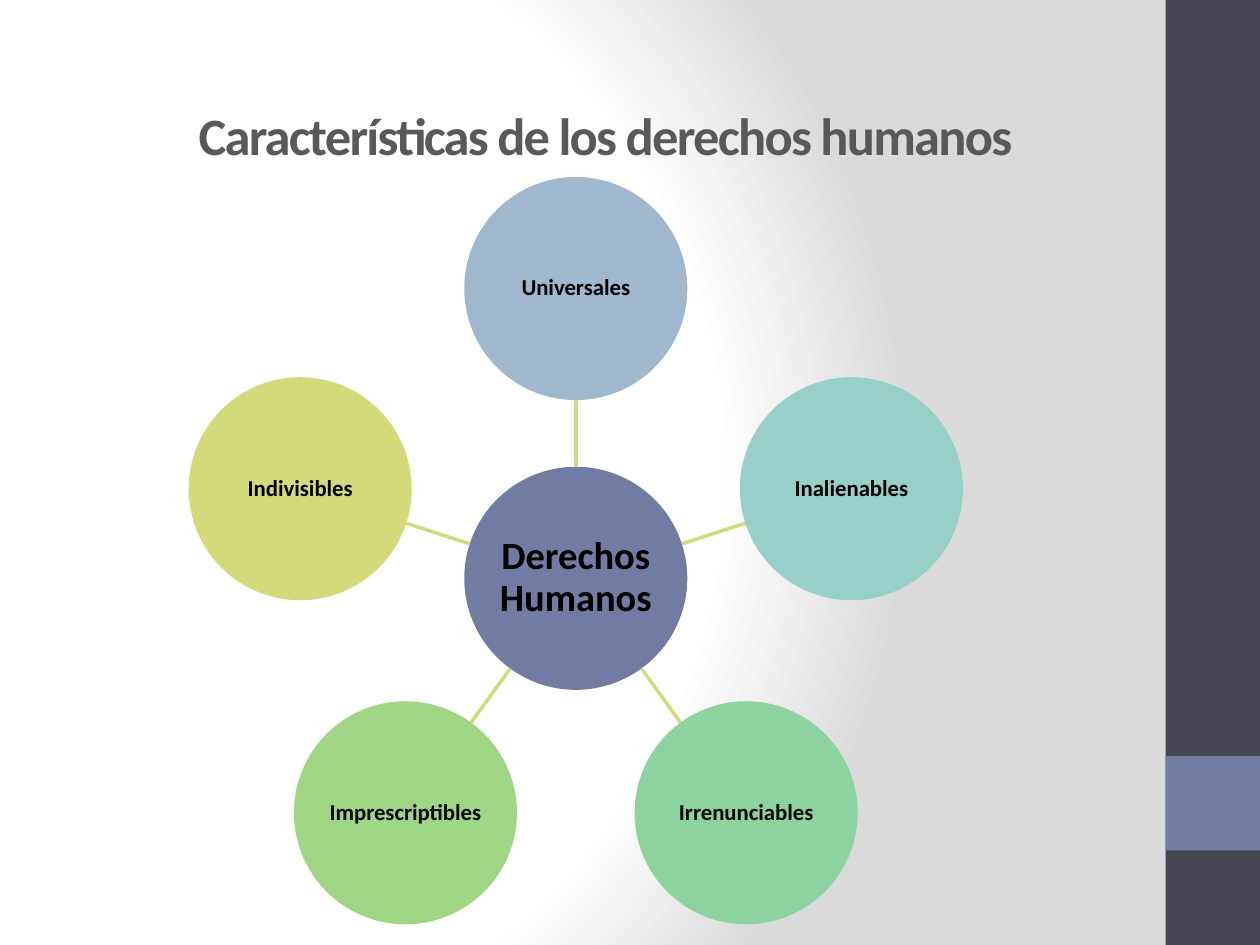
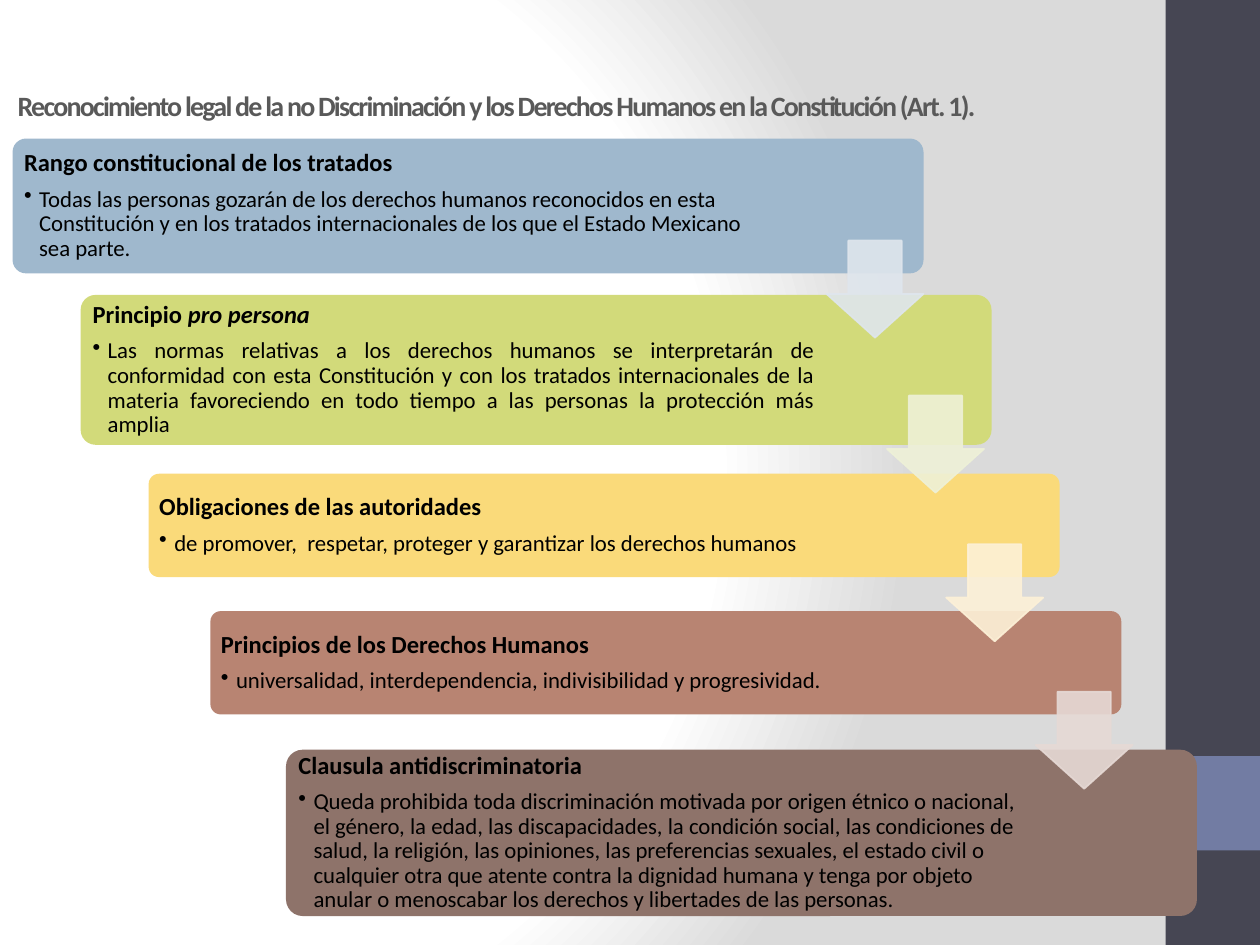
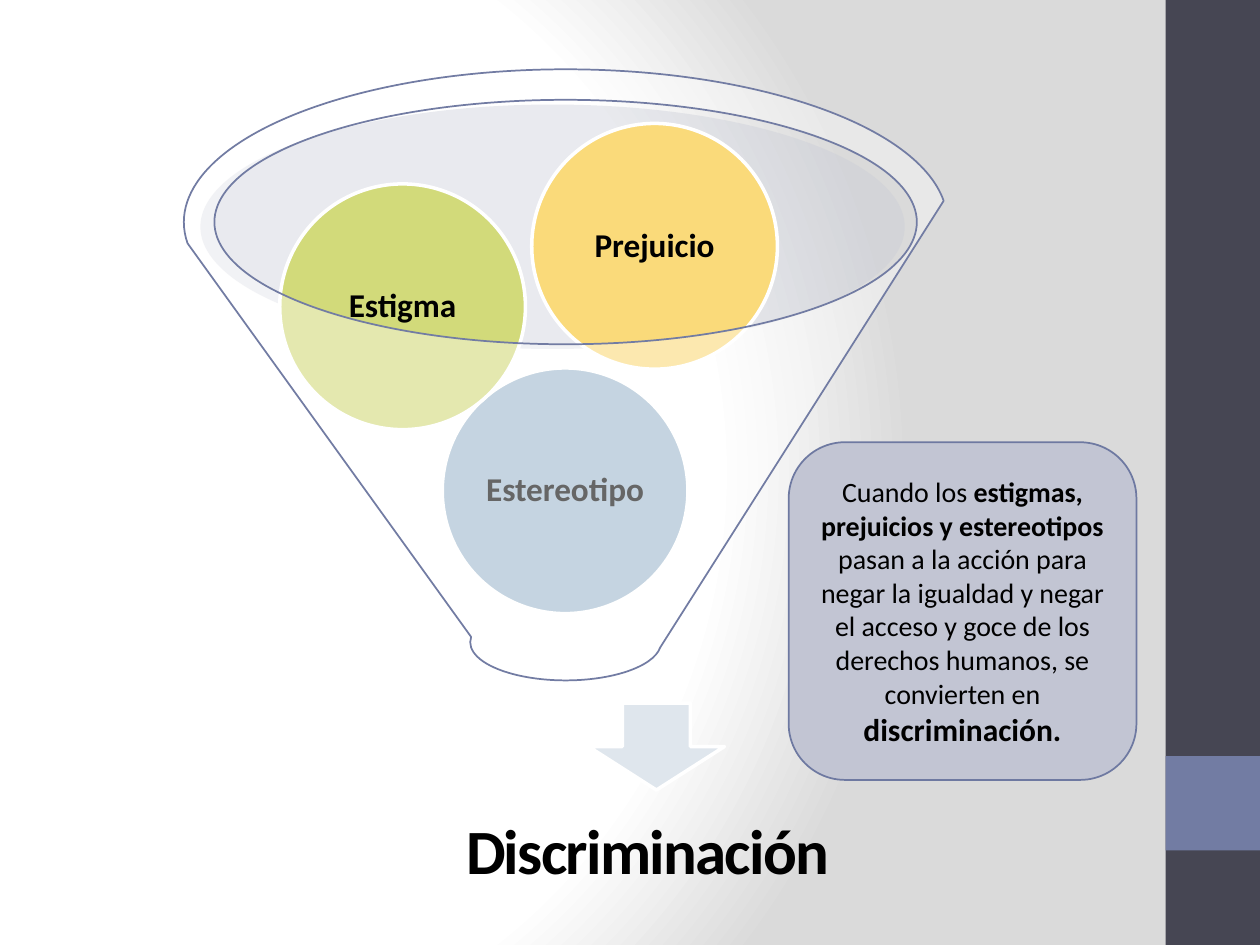
import math

import pptx
import pptx.dml.color
import pptx.enum.shapes
import pptx.enum.text
import pptx.oxml
import pptx.oxml.ns
import pptx.util

Inches = pptx.util.Inches
Pt = pptx.util.Pt
KIND = pptx.enum.shapes.MSO_SHAPE
ALIGN = pptx.enum.text.PP_ALIGN
MIDDLE = pptx.enum.text.MSO_ANCHOR.MIDDLE
qn = pptx.oxml.ns.qn


class Theme:
    font = "Calibri"
    dark, slate, edge = "464653", "727CA3", "6E79A1"
    white, shade, black, grey = "FFFFFF", "DADADA", "000000", "595959"
    blue, teal, mint, green = "9FB8CD", "96D0C8", "8DD3A0", "9ED684"
    lime, gold, clay, brown = "D2DA7A", "FADA7A", "B88472", "8E736A"
    ice, cream, sand, rose = "DFE6ED", "EEF1D7", "FDF1D7", "E6D9D5"
    panel, mist = "C2C5D3", "C9CCD7"
    title, lead, hub, result = 30, 16, 22, 36
    ball, strong, head, body = 19, 18, 14, 13


def draw(slide, kind, box, fill, line=None, width=1, alpha=None):
    """Add a preset shape; alpha is the opacity of its fill in percent."""
    item = slide.shapes.add_shape(kind, *map(Inches, box))
    item.shadow.inherit = False
    item.fill.solid()
    item.fill.fore_color.rgb = pptx.dml.color.RGBColor.from_string(fill)
    if alpha:
        color = item.element.spPr.find(qn("a:solidFill"))[0]
        color.makeelement(qn("a:alpha"))
        pptx.oxml.ns  # namespace helpers
        color.append(color.makeelement(qn("a:alpha"), {"val": str(alpha * 1000)}))
    if line:
        item.line.color.rgb = pptx.dml.color.RGBColor.from_string(line)
        item.line.width = Pt(width)
    else:
        item.line.fill.background()
    return item


def write(item, parts, inset=None, right=None, color=Theme.black,
          align=ALIGN.CENTER, spacing=None, track=None):
    """Write parts (text, size, bold, italic) into the last paragraph."""
    frame = item.text_frame
    frame.word_wrap = True
    frame.auto_size = pptx.enum.text.MSO_AUTO_SIZE.NONE
    frame.vertical_anchor = MIDDLE
    if inset is not None:
        frame.margin_left = frame.margin_top = frame.margin_bottom = Inches(inset)
        frame.margin_right = Inches(inset if right is None else right)
    para = frame.paragraphs[-1]
    para.alignment = align
    if spacing:
        para.line_spacing = spacing
    for text, size, bold, italic in parts:
        run = para.add_run()
        run.text = text
        run.font.name = Theme.font
        run.font.size = Pt(size)
        run.font.bold = bold
        run.font.italic = italic
        run.font.color.rgb = pptx.dml.color.RGBColor.from_string(color)
        if track:
            run.font._element.set("spc", str(track * 100))
    return para


deck = pptx.Presentation()
deck.slide_width, deck.slide_height = Inches(10), Inches(7.5)
titled, blank = deck.slide_layouts[5], deck.slide_layouts[6]
traits = deck.slides.add_slide(titled)
law = deck.slides.add_slide(titled)
cause = deck.slides.add_slide(blank)

# Shared background on the master
master = deck.slide_master
master.background.fill.solid()
back = master.element.find(".//" + qn("p:bgPr"))
stops = "".join(
    f'<a:gs pos="{pos * 1000}"><a:srgbClr val="{color}"/></a:gs>'
    for pos, color in ((0, Theme.white), (75, Theme.white), (100, Theme.shade)))
back.replace(back[0], pptx.oxml.parse_xml(
    '<a:gradFill xmlns:a="http://schemas.openxmlformats.org/drawingml/2006/main" '
    f'rotWithShape="1"><a:gsLst>{stops}</a:gsLst><a:path path="circle">'
    '<a:fillToRect l="20000" t="50000" r="100000" b="50000"/></a:path></a:gradFill>'))

# Shared side bands, moved behind the master's placeholders
bands = (((9.25, 0, 0.75, 7.5), Theme.dark), ((9.25, 6, 0.75, 0.75), Theme.slate))
for i, (box, fill) in enumerate(bands):
    band = draw(traits, KIND.RECTANGLE, box, fill)
    band.element.nvSpPr.cNvPr.set("id", str(20 + i))
    master.element.cSld.spTree.insert(2 + i, band.element)

# Titles
titles = (
    (traits, (1.46, 0.76, 6.69, 0.62), "Características de los derechos humanos",
     Theme.title, ALIGN.CENTER),
    (law, (0.04, 0.52, 9.73, 0.63),
     "Reconocimiento legal de la no Discriminación y los Derechos Humanos "
     "en la Constitución (Art. 1).", Theme.lead, ALIGN.LEFT),
)
for slide, box, text, size, align in titles:
    title = slide.shapes.title
    title.left, title.top, title.width, title.height = map(Inches, box)
    write(title, [(text, size, True, False)], color=Theme.grey, align=align, track=-1)

# Traits: hub, spokes and five circles at equal angles
mid_x, mid_y, radius, orbit = 4.57, 4.59, 0.885, 2.3
side = 2 * radius
hub = draw(traits, KIND.OVAL, (mid_x - radius, mid_y - radius, side, side), Theme.slate)
write(hub, [("Derechos Humanos", Theme.hub, True, False)], inset=0.02, spacing=0.9)
circles = (
    ("Universales", Theme.blue),
    ("Inalienables", Theme.teal),
    ("Irrenunciables", Theme.mint),
    ("Imprescriptibles", Theme.green),
    ("Indivisibles", Theme.lime),
)
for i, (name, fill) in enumerate(circles):
    angle = math.radians(-90 + i * 360 / len(circles))
    cos, sin = math.cos(angle), math.sin(angle)
    near, far = radius, orbit - radius
    spoke = traits.shapes.add_connector(
        pptx.enum.shapes.MSO_CONNECTOR.STRAIGHT,
        Inches(mid_x + near * cos), Inches(mid_y + near * sin),
        Inches(mid_x + far * cos), Inches(mid_y + far * sin))
    spoke.line.color.rgb = pptx.dml.color.RGBColor.from_string(Theme.lime)
    spoke.line.width = Pt(2)
    props = spoke.element.spPr
    props.append(props.makeelement(qn("a:effectLst")))
    left, top = mid_x + orbit * cos - radius, mid_y + orbit * sin - radius
    circle = draw(traits, KIND.OVAL, (left, top, side, side), fill)
    write(circle, [(name, Theme.body, True, False)], inset=0.01, spacing=0.9)

# Law: stepped panels
steps = (
    (0.1, 1.1, 1.07, Theme.blue, ALIGN.LEFT,
     [("Rango constitucional de los tratados", Theme.head, True, False)],
     "Todas las personas gozarán de los derechos humanos reconocidos en esta "
     "Constitución y en los tratados internacionales de los que el Estado Mexicano "
     "sea parte."),
    (0.64, 2.34, 1.19, Theme.lime, ALIGN.JUSTIFY,
     [("Principio ", Theme.head, True, False), ("pro persona", Theme.head, True, True)],
     "Las normas relativas a los derechos humanos se interpretarán de conformidad "
     "con esta Constitución y con los tratados internacionales de la materia "
     "favoreciendo en todo tiempo a las personas la protección más amplia"),
    (1.18, 3.76, 0.82, Theme.gold, ALIGN.LEFT,
     [("Obligaciones de las autoridades", Theme.head, True, False)],
     "de promover,  respetar, proteger y garantizar los derechos humanos"),
    (1.67, 4.85, 0.82, Theme.clay, ALIGN.LEFT,
     [("Principios de los Derechos Humanos", Theme.head, True, False)],
     "universalidad, interdependencia, indivisibilidad y progresividad."),
    (2.27, 5.95, 1.32, Theme.brown, ALIGN.LEFT,
     [("Clausula antidiscriminatoria", Theme.head, True, False)],
     "Queda prohibida toda discriminación motivada por origen étnico o nacional, "
     "el género, la edad, las discapacidades, la condición social, las condiciones "
     "de salud, la religión, las opiniones, las preferencias sexuales, el estado "
     "civil o cualquier otra que atente contra la dignidad humana y tenga por objeto "
     "anular o menoscabar los derechos y libertades de las personas."),
)
for left, top, height, fill, align, head, body in steps:
    step = draw(law, KIND.ROUNDED_RECTANGLE, (left, top, 7.23, height), fill)
    step.adjustments[0] = 0.1
    para = write(step, head, inset=0.06, right=1.38, align=align, spacing=0.9)
    para.space_after = Pt(6)
    point = step.text_frame.add_paragraph()
    point.level = 1
    props = point._p.get_or_add_pPr()
    props.set("marL", str(Inches(0.12)))
    props.set("indent", str(-Inches(0.12)))
    props.append(props.makeelement(qn("a:buChar"), {"char": "•"}))
    write(step, [(body, Theme.body, False, False)], inset=0.06, right=1.38,
          align=align, spacing=0.9)

# Law: arrows between the panels
arrows = ((6.56, 1.91, Theme.ice), (7.04, 3.14, Theme.cream),
          (7.51, 4.32, Theme.sand), (8.22, 5.49, Theme.rose))
for left, top, fill in arrows:
    arrow = draw(law, KIND.DOWN_ARROW, (left, top, 0.77, 0.77), fill, fill, alpha=90)
    arrow.adjustments[0], arrow.adjustments[1] = 0.55, 0.45
    tint = arrow.element.spPr.find(qn("a:ln")).find(".//" + qn("a:srgbClr"))
    tint.append(tint.makeelement(qn("a:alpha"), {"val": "90000"}))

# Cause: explanation panel
panel = draw(cause, KIND.ROUNDED_RECTANGLE, (6.26, 3.51, 2.76, 2.68),
             Theme.panel, Theme.edge)
write(panel, [
    ("Cuando los ", Theme.lead, False, False),
    ("estigmas, prejuicios y estereotipos", Theme.lead, True, False),
    (" pasan a la acción para negar la igualdad y negar el acceso y goce de los "
     "derechos humanos, se convierten en ", Theme.lead, False, False),
    ("discriminación.", Theme.strong, True, False),
])

# Cause: funnel mouth, arrow and result
draw(cause, KIND.OVAL, (1.59, 0.83, 5.59, 1.94), Theme.mist, alpha=40)
draw(cause, KIND.DOWN_ARROW, (4.67, 5.58, 1.08, 0.69), Theme.ice, Theme.white, 2)
result = cause.shapes.add_textbox(*map(Inches, (2.54, 6.13, 5.2, 1.3)))
write(result, [("Discriminación", Theme.result, True, False)], inset=0.28,
      spacing=0.9, track=-1)

# Cause: balls inside the funnel
balls = (("Estereotipo", 3.51, 2.92, Theme.blue),
         ("Estigma", 2.22, 1.46, Theme.lime),
         ("Prejuicio", 4.22, 0.98, Theme.gold))
for name, left, top, fill in balls:
    ball = draw(cause, KIND.OVAL, (left, top, 1.95, 1.95), fill, Theme.white, 2)
    write(ball, [(name, Theme.ball, True, False)], inset=0.03, spacing=0.9)
draw(cause, KIND.FUNNEL, (1.46, 0.55, 6.06, 4.85), Theme.white, Theme.slate, alpha=40)

deck.save("out.pptx")
